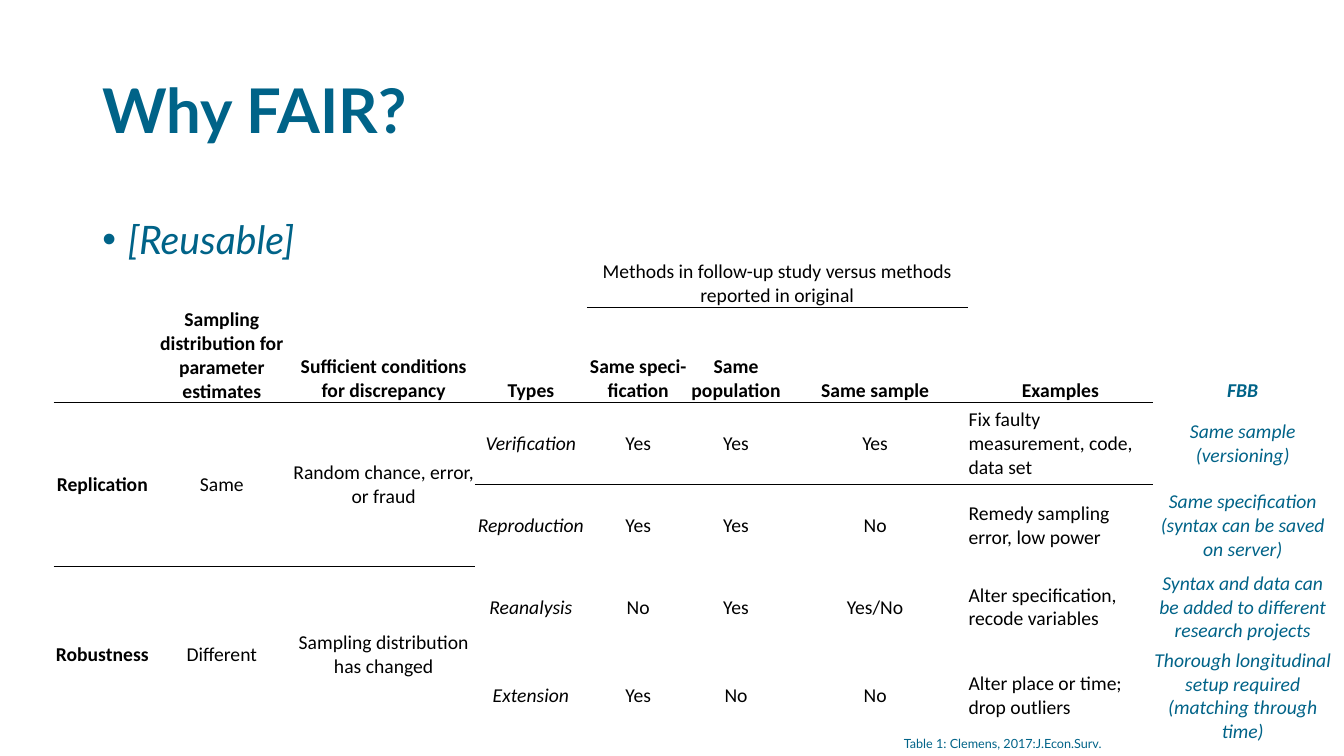
from lxml.etree import SubElement
from pptx import Presentation
from pptx.dml.color import RGBColor
from pptx.enum.text import MSO_ANCHOR as Anchor, PP_ALIGN as Align
from pptx.oxml import parse_xml
from pptx.oxml.ns import nsdecls, qn
from pptx.util import Cm, Pt

BLUE, BLACK = "006388", "000000"
NO_STYLE = "{2D5ABB26-0587-4C30-8999-92F81FD0307C}"


def style_text(paragraph, font_name, size, color, bold=False, italic=False):
    """Format every run of a paragraph."""
    for run in paragraph.runs:
        font = run.font
        font.name, font.size = font_name, Pt(size)
        font.bold, font.italic = bold, italic
        font.color.rgb = RGBColor.from_string(color)


def add_rule(cell, side):
    """Draw a thin black border on the top (lnT) or bottom (lnB) of a cell."""
    cell._tc.get_or_add_tcPr().insert(0, parse_xml(
        f'<a:{side} {nsdecls("a")} w="6350"><a:solidFill><a:srgbClr val="{BLACK}"/>'
        f'</a:solidFill><a:prstDash val="solid"/></a:{side}>'))


presentation = Presentation()
presentation.slide_width, presentation.slide_height = Cm(33.87), Cm(19.05)
slide = presentation.slides.add_slide(presentation.slide_layouts[6])

# Title, bullet and table credit
text_boxes = [
    ("Why FAIR?", 2.33, 1.01, 29.21, 3.68, 44, True, False),
    ("[Reusable]", 2.33, 5.07, 29.21, 6.83, 28, False, True),
    ("Table 1: Clemens, 2017:J.Econ.Surv.", 22.53, 18.42, 5.84, 0.64, 9, False, False),
]
frames = []
for text, left, top, width, height, size, bold, italic in text_boxes:
    box = slide.shapes.add_textbox(Cm(left), Cm(top), Cm(width), Cm(height))
    frame = box.text_frame
    frame.word_wrap = True
    frame.text = text
    style_text(frame.paragraphs[0], "Lato", size, BLUE, bold, italic)
    frames.append(frame)

title, bullet, credit = frames
title.vertical_anchor = Anchor.MIDDLE
title.paragraphs[0].line_spacing = 0.9
bullet_paragraph = bullet.paragraphs[0]
bullet_paragraph.line_spacing = 1.2
bullet_paragraph.space_before = Pt(10)
properties = bullet_paragraph._p.get_or_add_pPr()
properties.set("marL", str(Cm(0.64)))
properties.set("indent", str(-Cm(0.64)))
SubElement(properties, qn("a:buFont"), typeface="Arial")
SubElement(properties, qn("a:buChar"), char="•")

# Table of study types
column_widths = [2.46, 3.56, 4.6, 2.82, 2.59, 2.34, 4.67, 4.67, 4.52]
row_heights = [1.4, 2.34, 2.06, 2.06, 2.06, 2.06]
rows = [
    ["", "", "", "", "Methods in follow-up study versus methods reported in original",
     "", "", "", ""],
    ["", "Sampling distribution for parameter estimates",
     "Sufficient conditions for discrepancy", "Types", "Same speci-fication",
     "Same population", "Same sample", "Examples", "FBB"],
    ["Replication", "Same", "Random chance, error, or fraud", "Verification",
     "Yes", "Yes", "Yes", "Fix faulty measurement, code, data set",
     "Same sample (versioning)"],
    ["", "", "", "Reproduction", "Yes", "Yes", "No",
     "Remedy sampling error, low power",
     "Same specification (syntax can be saved on server)"],
    ["Robustness", "Different", "Sampling distribution has changed", "Reanalysis",
     "No", "Yes", "Yes/No", "Alter specification, recode variables",
     "Syntax and data can be added to different research projects"],
    ["", "", "", "Extension", "Yes", "No", "No", "Alter place or time; drop outliers",
     "Thorough longitudinal setup required (matching through time)"],
]
TYPES, METHODS, EXAMPLES, FBB = 3, range(4, 7), 7, 8
HEADER, BODY = 1, 2

table_frame = slide.shapes.add_table(
    len(rows), len(column_widths), Cm(1.35), Cm(6.35),
    Cm(sum(column_widths)), Cm(sum(row_heights)))
table = table_frame.table
table.first_row = table.horz_banding = False
table._tbl.tblPr.find(qn("a:tableStyleId")).text = NO_STYLE
for column, width in zip(table.columns, column_widths):
    column.width = Cm(width)
for row, height in zip(table.rows, row_heights):
    row.height = Cm(height)

for r, texts in enumerate(rows):
    for c, text in enumerate(texts):
        cell = table.cell(r, c)
        cell.text = text
        cell.fill.background()
        cell.margin_left = cell.margin_right = cell.margin_top = Cm(0.02)
        cell.margin_bottom = 0
        cell.vertical_anchor = Anchor.MIDDLE if r >= BODY else Anchor.BOTTOM
        paragraph = cell.text_frame.paragraphs[0]
        is_example = r >= BODY and c == EXAMPLES
        paragraph.alignment = Align.LEFT if is_example else Align.CENTER
        style_text(paragraph, "Calibri", 14, BLUE if c == FBB else BLACK,
                   bold=r == HEADER or (r >= BODY and c == 0),
                   italic=c == FBB or (r >= BODY and c == TYPES))

# Merged cells
table.cell(0, METHODS[0]).merge(table.cell(0, METHODS[-1]))
for r in (BODY, BODY + 2):
    for c in range(TYPES):
        table.cell(r, c).merge(table.cell(r + 1, c))

# Rules under the methods heading and under the header row
for upper_row, columns in [(HEADER, range(FBB)), (0, METHODS)]:
    for c in columns:
        add_rule(table.cell(upper_row, c), "lnB")
        add_rule(table.cell(upper_row + 1, c), "lnT")

presentation.save("out.pptx")
